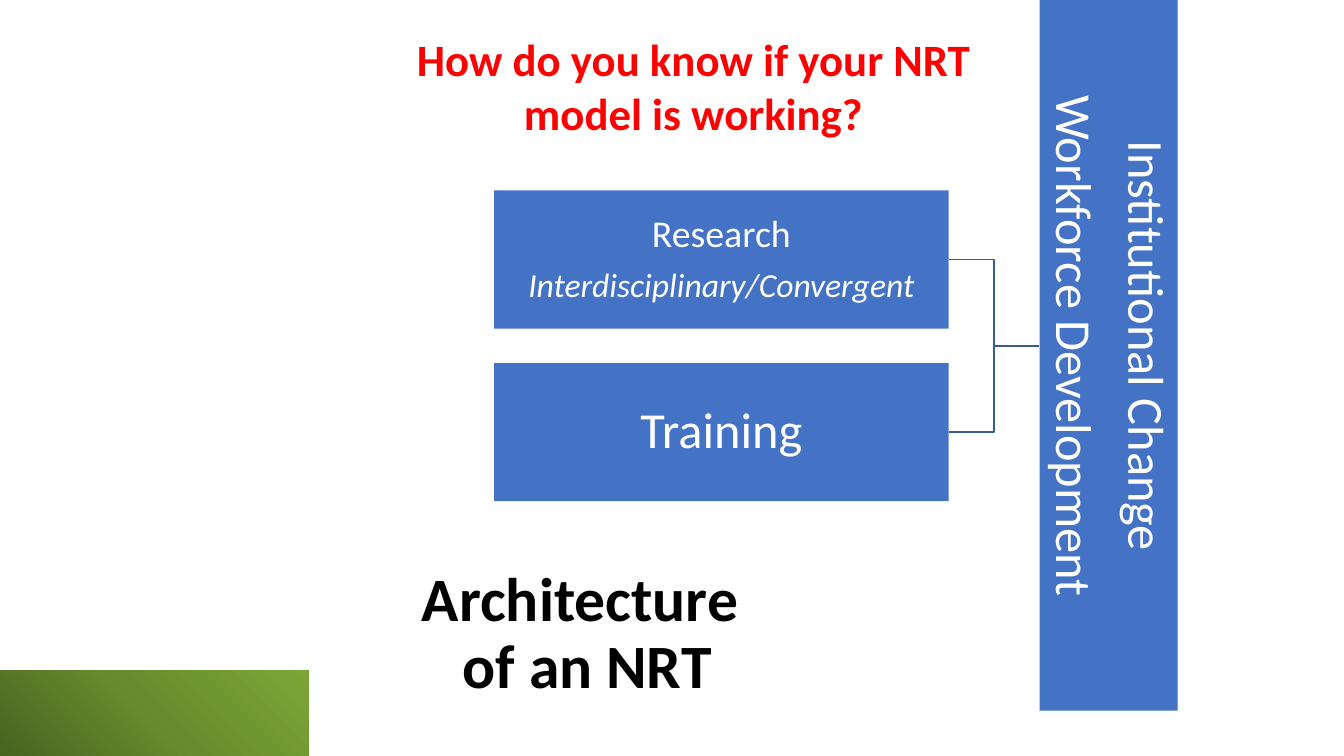
"""Build the slide on the architecture of an NRT."""
from copy import deepcopy

from lxml import etree
from pptx import Presentation
from pptx.dml.color import RGBColor
from pptx.enum.shapes import MSO_CONNECTOR, MSO_SHAPE
from pptx.enum.text import MSO_ANCHOR, MSO_AUTO_SIZE, PP_ALIGN
from pptx.oxml.ns import qn
from pptx.util import Inches, Pt

ELBOW = MSO_CONNECTOR.ELBOW
RECTANGLE = MSO_SHAPE.RECTANGLE
TOP, MIDDLE = MSO_ANCHOR.TOP, MSO_ANCHOR.MIDDLE
CENTER = PP_ALIGN.CENTER
NO_FIT = MSO_AUTO_SIZE.NONE

FONT = "Calibri"
COLORS = {"box": "4472C4", "line": "365B9D", "white": "FFFFFF",
          "question": "FF0000", "title": "000000"}
BAND_STOPS = [(0, "496320"), (0.5, "678C2D"), (1, "7BA636")]

TITLE = [("Architecture ", 44, False), ("of an NRT", 44, False)]
QUESTION = [("How do you know if your NRT model is working?", 32, False)]
OUTCOMES = [("Institutional Change", 36, False), ("Workforce Development", 36, False)]
ELEMENTS = [
    [("Research", 27, False), ("Interdisciplinary/Convergent", 24, True)],
    [("Training", 36, False)],
]

SLIDE_W, SLIDE_H = 13.33, 7.5
BOX_LEFT, BOX_TOP, BOX_W, BOX_H = 4.9, 1.89, 4.51, 1.37
ROW_STEP = BOX_H * 1.25
GAP = 0.9
BAR_LENGTH = 7.24
BOX_RIGHT = BOX_LEFT + BOX_W
BAR_LEFT = BOX_RIGHT + GAP
CENTER_Y = BOX_TOP + (ROW_STEP + BOX_H) / 2


def rgb(name):
    return RGBColor.from_string(COLORS[name])


def write(frame, lines, color, bold=False, spacing=None, after=0):
    """Put one centred paragraph per line into a text frame."""
    frame.word_wrap = True
    for index, (text, size, italic) in enumerate(lines):
        para = frame.add_paragraph() if index else frame.paragraphs[0]
        para.alignment = CENTER
        para.space_before = Pt(0)
        para.space_after = Pt(size * after)
        if spacing:
            para.line_spacing = spacing
        span = para.add_run()
        span.text = text
        span.font.name = FONT
        span.font.size = Pt(size)
        span.font.bold = bold
        span.font.italic = italic
        span.font.color.rgb = rgb(color)


def add_rectangle(slide, left, top, width, height):
    shape = slide.shapes.add_shape(
        RECTANGLE, Inches(left), Inches(top), Inches(width), Inches(height))
    shape.shadow.inherit = False
    shape.line.fill.background()
    return shape


def add_box(slide, left, top, width, height, lines):
    box = add_rectangle(slide, left, top, width, height)
    box.fill.solid()
    box.fill.fore_color.rgb = rgb("box")
    frame = box.text_frame
    frame.vertical_anchor = MIDDLE
    frame.margin_left = frame.margin_right = Inches(0.03)
    frame.margin_top = frame.margin_bottom = Inches(0.03)
    write(frame, lines, "white", spacing=0.9, after=0.35)
    return box


def add_band(slide):
    band = add_rectangle(slide, 0, 6.65, 3.06, SLIDE_H - 6.65)
    band.fill.gradient()
    band.fill.gradient_angle = 45
    stop_list = band._element.spPr.find(".//" + qn("a:gsLst"))
    stop_list.append(deepcopy(stop_list[-1]))
    for stop, (position, color) in zip(band.fill.gradient_stops, BAND_STOPS):
        stop.position = position
        stop.color.rgb = RGBColor.from_string(color)


def add_link(slide, start_y):
    link = slide.shapes.add_connector(
        ELBOW, Inches(BOX_RIGHT), Inches(start_y), Inches(BAR_LEFT), Inches(CENTER_Y))
    link.line.color.rgb = rgb("line")
    link.line.width = Pt(1)
    etree.SubElement(link._element.spPr, qn("a:effectLst"))


def main():
    deck = Presentation()
    deck.slide_width, deck.slide_height = Inches(SLIDE_W), Inches(SLIDE_H)
    slide = deck.slides.add_slide(deck.slide_layouts[5])

    add_band(slide)
    tops = [BOX_TOP + row * ROW_STEP for row in range(len(ELEMENTS))]
    for top in tops:
        add_link(slide, top + BOX_H / 2)
    bar = add_box(slide, BAR_LEFT + (BOX_H - BAR_LENGTH) / 2, CENTER_Y - BOX_H / 2,
                  BAR_LENGTH, BOX_H, OUTCOMES)
    bar.rotation = 90
    for top, lines in zip(tops, ELEMENTS):
        add_box(slide, BOX_LEFT, top, BOX_W, BOX_H, lines)

    question = slide.shapes.add_textbox(Inches(4), Inches(0.27), Inches(5.76), Inches(1.18))
    write(question.text_frame, QUESTION, "question", bold=True)

    title = slide.shapes.title
    title.left, title.top = Inches(3.36), Inches(5.59)
    title.width, title.height = Inches(4.93), Inches(0.8)
    title.text_frame.auto_size = NO_FIT
    title.text_frame.vertical_anchor = TOP
    write(title.text_frame, TITLE, "title", bold=True, spacing=0.9)

    deck.save("out.pptx")


if __name__ == "__main__":
    main()
